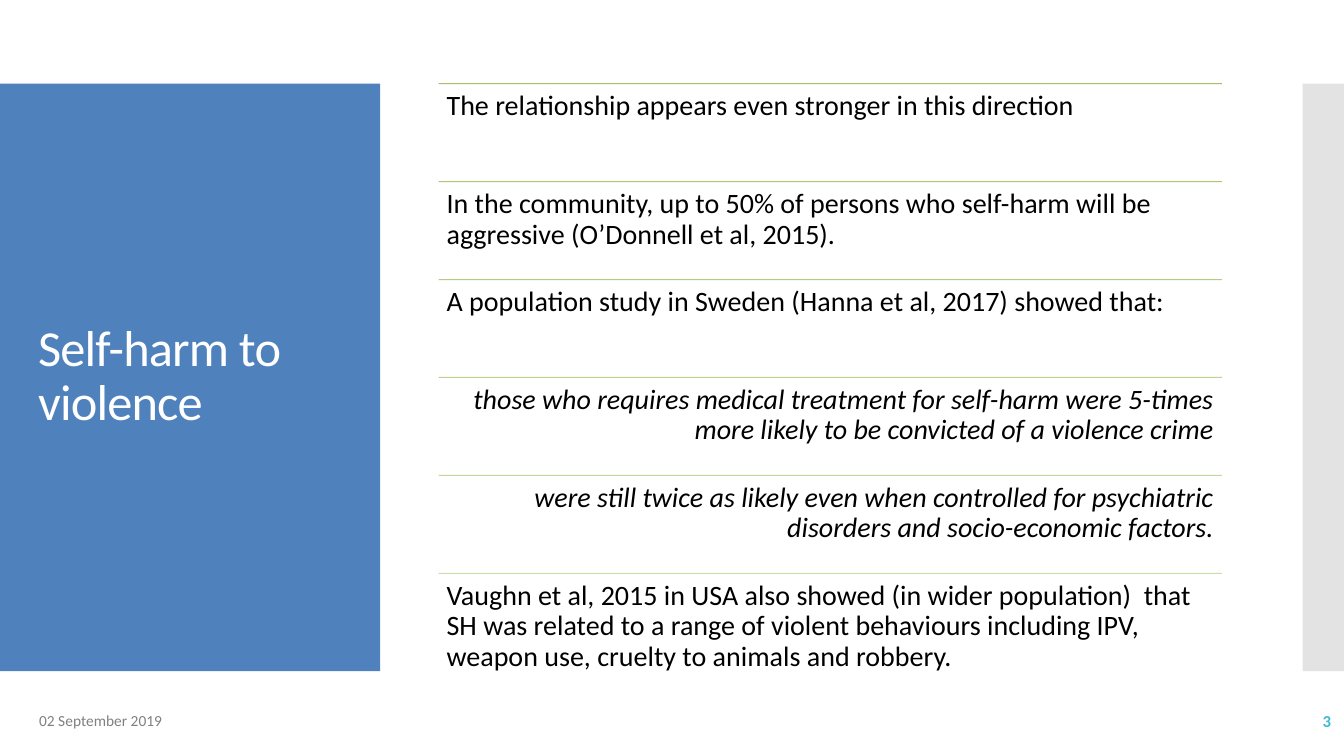
from lxml import etree
from pptx import Presentation
from pptx.dml.color import RGBColor
from pptx.enum.shapes import MSO_CONNECTOR, MSO_SHAPE
from pptx.enum.text import MSO_ANCHOR, PP_ALIGN
from pptx.oxml.ns import qn
from pptx.util import Inches, Pt

RECTANGLE = MSO_SHAPE.RECTANGLE
STRAIGHT = MSO_CONNECTOR.STRAIGHT
TOP, MIDDLE = MSO_ANCHOR.TOP, MSO_ANCHOR.MIDDLE
LEFT, RIGHT = PP_ALIGN.LEFT, PP_ALIGN.RIGHT

FONT = "Calibri"
COLOURS = {
    "panel": "4F81BD",
    "strip": "C8C8C8",
    "rule": "9BBB59",
    "title": "FFFFFF",
    "body": "000000",
    "date": "808080",
    "number": "40BAD2",
}
FINDINGS = [
    ("The relationship appears even stronger in this direction", False),
    ("In the community, up to 50% of persons who self-harm will be aggressive "
     "(O’Donnell et al, 2015).", False),
    ("A population study in Sweden (Hanna et al, 2017) showed that:", False),
    ("those who requires medical treatment for self-harm were 5-times more likely "
     "to be convicted of a violence crime", True),
    ("were still twice as likely even when controlled for psychiatric disorders "
     "and socio-economic factors.", True),
    ("Vaughn et al, 2015 in USA also showed (in wider population)  that SH was "
     "related to a range of violent behaviours including IPV, weapon use, cruelty "
     "to animals and robbery.", False),
]


def set_alpha(colour_format_parent, percent):
    colour = next(colour_format_parent.iter(qn("a:srgbClr")))
    etree.SubElement(colour, qn("a:alpha"), val=str(percent * 1000))


def add_block(page, left, top, width, height, colour):
    block = page.shapes.add_shape(
        RECTANGLE, Inches(left), Inches(top), Inches(width), Inches(height))
    block.shadow.inherit = False
    block.fill.solid()
    block.fill.fore_color.rgb = RGBColor.from_string(COLOURS[colour])
    block.line.fill.background()
    return block


def add_text(page, left, top, width, height, text, size, colour, align=LEFT,
             anchor=MIDDLE, inset=None, spacing=1.0, bold=False, italic=False):
    box = page.shapes.add_textbox(
        Inches(left), Inches(top), Inches(width), Inches(height))
    frame = box.text_frame
    frame.word_wrap = True
    frame.vertical_anchor = anchor
    if inset is not None:
        frame.margin_left = frame.margin_right = Inches(inset)
        frame.margin_top = frame.margin_bottom = Inches(inset)
    para = frame.paragraphs[0]
    para.alignment = align
    para.line_spacing = spacing
    span = para.add_run()
    span.text = text
    span.font.name = FONT
    span.font.size = Pt(size)
    span.font.bold = bold
    span.font.italic = italic
    span.font.color.rgb = RGBColor.from_string(COLOURS[colour])
    return span


def add_rule(page, left, top, width, opacity):
    rule = page.shapes.add_connector(
        STRAIGHT, Inches(left), Inches(top), Inches(left + width), Inches(top))
    rule.line.width = Pt(0.75)
    rule.line.color.rgb = RGBColor.from_string(COLOURS["rule"])
    properties = rule._element.spPr
    set_alpha(properties, opacity)
    effects = etree.SubElement(properties, qn("a:effectLst"))
    shadow = etree.SubElement(
        effects, qn("a:outerShdw"), blurRad=str(Pt(3.5)), dist=str(Pt(1.1)),
        dir="5400000", algn="ctr", rotWithShape="0")
    etree.SubElement(shadow, qn("a:srgbClr"), val=COLOURS["body"])
    set_alpha(shadow, 45)


def add_title_panel(page, left, top, width, height, title):
    add_block(page, left, top, width, height, "panel")
    span = add_text(page, left + 0.28, top + 0.4, width - 0.55, height - 0.8,
                    title, 36, "title", spacing=0.9)
    span.font._element.set("spc", "-60")


def add_side_strip(page, left, top, width, height):
    strip = add_block(page, left, top, width, height, "strip")
    set_alpha(strip._element.spPr, 50)


def add_findings(page, left, top, width, height, findings):
    row_height = height / len(findings)
    for index, (text, is_detail) in enumerate(findings):
        row_top = top + index * row_height
        add_rule(page, left, row_top, width, 90 - 8 * index)
        add_text(page, left, row_top, width, row_height, text, 20, "body",
                 align=RIGHT if is_detail else LEFT, anchor=TOP, inset=0.08,
                 spacing=0.9, italic=is_detail)


def add_footer(page, left, top, width, height, date, number):
    add_text(page, left, top, 3, height, date, 11, "date")
    add_text(page, left + width - 1.67, top, 1.67, height, number, 12, "number",
             align=RIGHT, bold=True)


def main():
    deck = Presentation()
    deck.slide_width, deck.slide_height = Inches(13.33), Inches(7.5)
    page = deck.slides.add_slide(deck.slide_layouts[6])
    band_top, band_height = 0.83, 5.83
    add_title_panel(page, 0, band_top, 3.77, band_height, "Self-harm to violence")
    add_side_strip(page, 12.92, band_top, 0.41, band_height)
    add_findings(page, 4.35, band_top, 7.77, band_height, FINDINGS)
    add_footer(page, 0.29, 6.95, 13.01, 0.4, "02 September 2019", "3")
    deck.save("out.pptx")


if __name__ == "__main__":
    main()
